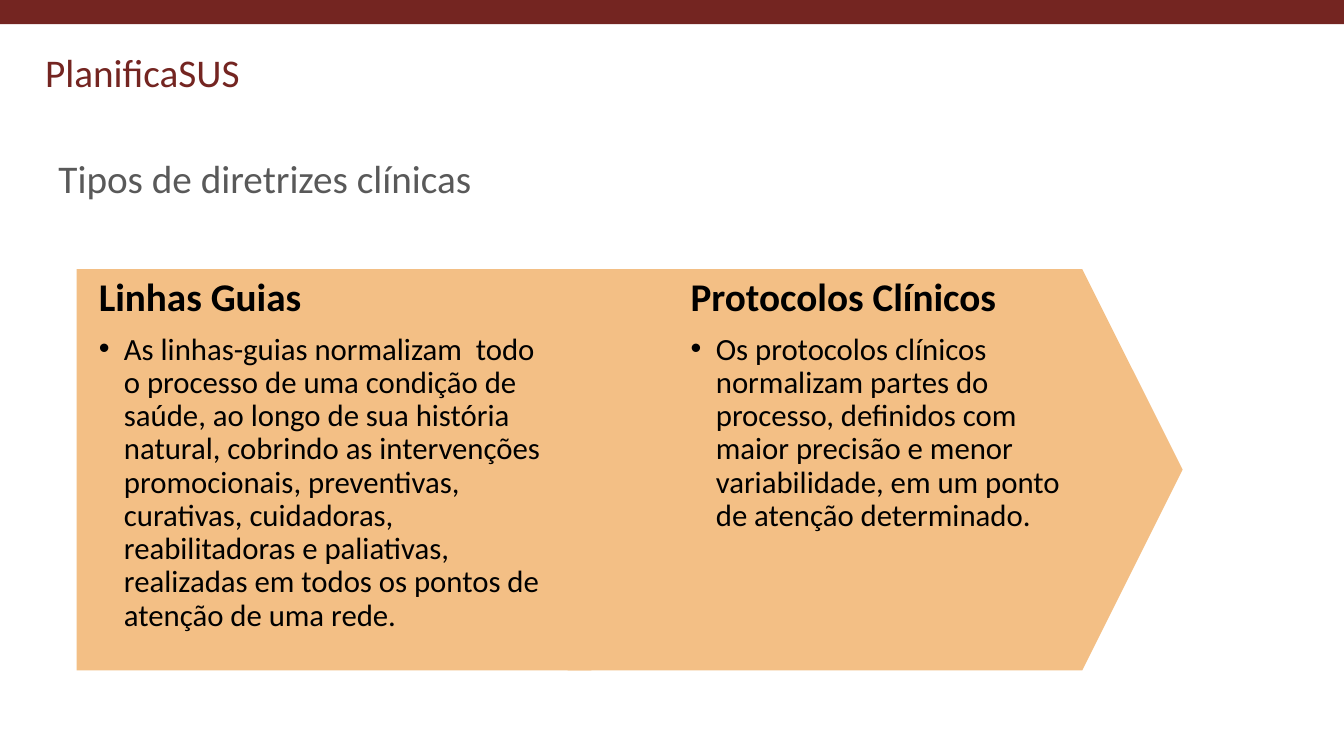
"""Build the slide on the two types of clinical guidelines."""
from pptx import Presentation
from pptx.dml.color import RGBColor
from pptx.enum.shapes import MSO_SHAPE as Shape
from pptx.enum.text import MSO_ANCHOR as Anchor, PP_ALIGN as Align
from pptx.util import Inches, Pt
from lxml.etree import SubElement
from pptx.oxml.ns import qn

FONT = "Calibri"
WINE, GREY, SAND, BLACK = "742521", "595959", "F3BF85", "000000"
BRAND = "PlanificaSUS"
TITLE = "Tipos de diretrizes clínicas"
TOP, WIDE, HIGH, TIP = 2.67, 6.1, 3.98, 0.25
STEPS = [
    dict(form=Shape.PENTAGON, left=0.76, text=(0.76, 5.6), right=0.86,
         head="Linhas Guias",
         body="As linhas-guias normalizam  todo o processo de uma condição de "
              "saúde, ao longo de sua história natural, cobrindo as "
              "intervenções promocionais, preventivas, curativas, cuidadoras, "
              "reabilitadoras e paliativas, realizadas em todos os pontos de "
              "atenção de uma rede."),
    dict(form=Shape.CHEVRON, left=5.63, text=(6.63, 4.11), right=0.22,
         head="Protocolos Clínicos",
         body="Os protocolos clínicos normalizam partes do processo, definidos "
              "com maior precisão e menor variabilidade, em um ponto de "
              "atenção determinado."),
]


def paint(target, color):
    target.rgb = RGBColor.from_string(color)


def style(par, size, color, bold=False):
    par.alignment = Align.LEFT
    par.font.name, par.font.size, par.font.bold = FONT, Pt(size), bold
    paint(par.font.color, color)


def block(slide, form, box, color):
    shape = slide.shapes.add_shape(form, *map(Inches, box))
    shape.shadow.inherit = False
    shape.fill.solid()
    paint(shape.fill.fore_color, color)
    shape.line.fill.background()
    return shape


def bullet(par, indent):
    props = par._p.get_or_add_pPr()
    props.set("marL", str(Inches(indent)))
    props.set("indent", str(-Inches(indent)))
    SubElement(props, qn("a:buFont"), typeface="Arial")
    SubElement(props, qn("a:buChar"), char="•")


def label(slide, box, right):
    frame = slide.shapes.add_textbox(*map(Inches, box)).text_frame
    frame.word_wrap = True
    frame.margin_left, frame.margin_right = Inches(0.22), Inches(right)
    frame.margin_top = frame.margin_bottom = Inches(0.08)
    return frame


def add_step(slide, step):
    arrow = block(slide, step["form"], (step["left"], TOP, WIDE, HIGH), SAND)
    arrow.adjustments[0] = TIP
    left, width = step["text"]
    frame = label(slide, (left, TOP, width, HIGH), step["right"])
    head, body = frame.paragraphs[0], frame.add_paragraph()
    head.text, body.text = step["head"], step["body"]
    body.level = 1
    bullet(body, 0.25)
    for par, size, after in ((head, 28, 10), (body, 22, 3)):
        par.line_spacing, par.space_after = 0.9, Pt(after)
        par.space_before = Pt(0)
        style(par, size, BLACK, par is head)


def main():
    deck = Presentation()
    deck.slide_width, deck.slide_height = Inches(13.33), Inches(7.5)
    slide = deck.slides.add_slide(deck.slide_layouts[5])

    brand = slide.shapes.add_textbox(*map(Inches, (0.35, 0.43, 2.15, 0.57)))
    brand.text_frame.word_wrap = False
    brand.text_frame.text = BRAND
    style(brand.text_frame.paragraphs[0], 28, WINE)

    block(slide, Shape.RECTANGLE, (0, 0, 13.33, 0.24), WINE)

    title = slide.shapes.title
    title.left, title.top = Inches(0.48), Inches(1.07)
    title.width, title.height = Inches(10.99), Inches(1.45)
    title.text_frame.text = TITLE
    title.text_frame.vertical_anchor = Anchor.MIDDLE
    par = title.text_frame.paragraphs[0]
    par.line_spacing = 0.9
    style(par, 28, GREY)

    for step in STEPS:
        add_step(slide, step)
    deck.save("out.pptx")


if __name__ == "__main__":
    main()
